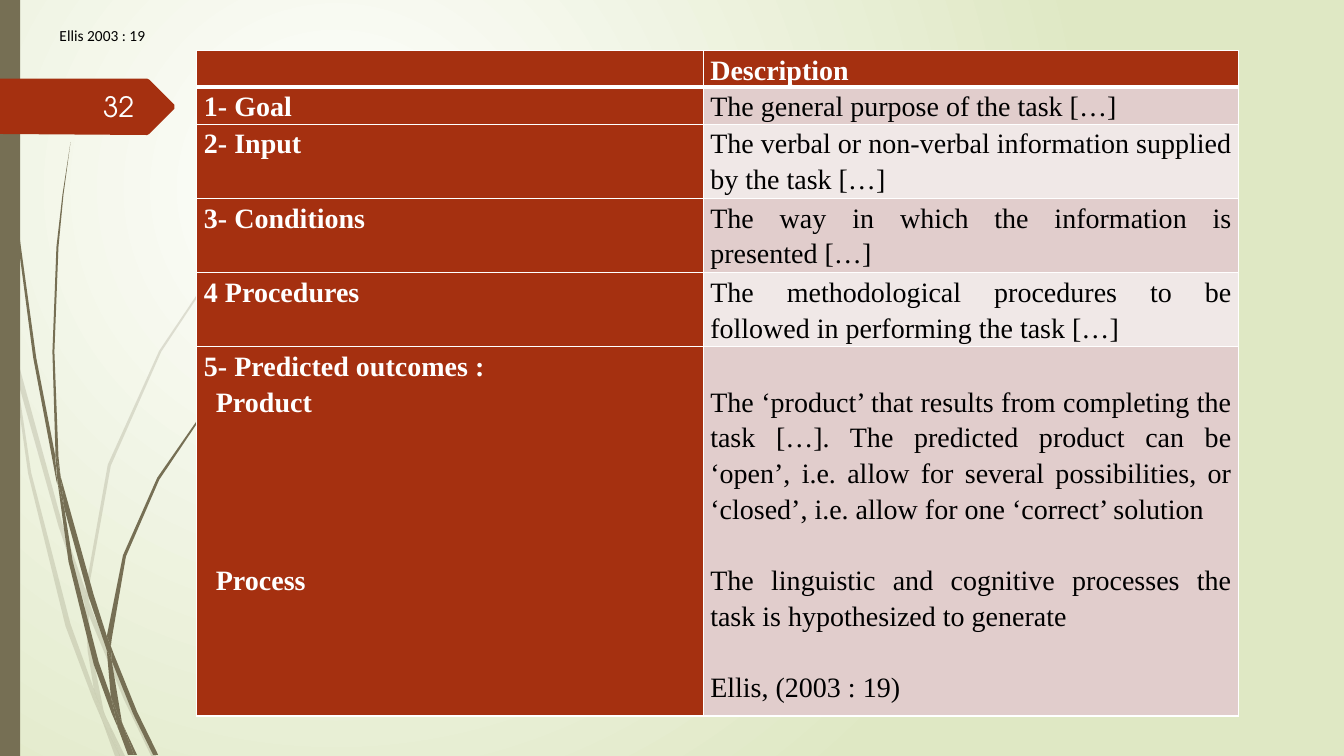
from lxml.etree import SubElement
from pptx import Presentation
from pptx.dml.color import RGBColor
from pptx.enum.shapes import MSO_SHAPE
from pptx.enum.text import MSO_ANCHOR, PP_ALIGN
from pptx.oxml.ns import qn
from pptx.util import Cm, Pt

COLORS = {
    "white": "FFFFFF", "black": "000000", "meadow": "DFE8C4", "stem": "766F54",
    "rust": "A53010", "rose": "E1CDCC", "blush": "F0E8E7", "number": "FEFFFF",
}
BODY = {"name": "Times New Roman", "size": Pt(20)}
GRID = Cm(0.0254)  # unit of the outline points below

PALE_STEMS = [
    [(11, 350), (9, 322), (0, 282), (0, 299), (10, 344)],
    [(58, 522), (84, 599), (85, 586), (62, 520), (14, 345), (17, 376)],
    [(92, 607), (88, 596), (88, 610), (123, 694), (150, 750), (155, 750), (127, 692)],
    [(119, 750), (124, 750), (105, 711)],
    [(93, 683), (70, 619), (31, 469), (17, 376), (11, 350), (28, 470), (65, 621),
     (92, 693), (101, 714), (99, 707)],
    [(84, 599), (87, 646), (93, 683), (96, 692), (105, 711), (103, 706), (91, 646),
     (88, 610), (88, 608)],
    [(88, 584), (110, 462), (160, 349), (229, 245), (268, 198), (290, 175), (312, 154),
     (312, 153), (289, 175), (268, 197), (228, 244), (158, 348), (107, 461), (85, 584),
     (85, 586), (88, 596)],
    [(101, 714), (114, 750), (119, 750)],
    [(88, 608), (88, 610), (88, 596), (85, 586), (84, 599)],
    [(96, 692), (93, 683), (99, 707), (101, 714), (119, 750), (105, 711)],
]
DARK_STEMS = [
    [(7, 110), (17, 233), (33, 355), (56, 477), (57, 481), (55, 457), (55, 453),
     (36, 355), (19, 232), (8, 109), (5, 48), (4, 0), (3, 0), (4, 48)],
    [(88, 592), (106, 645), (106, 633), (106, 631), (93, 590), (60, 472), (64, 505)],
    [(113, 649), (110, 641), (111, 656), (132, 708), (152, 749), (157, 749), (136, 706)],
    [(110, 691), (98, 657), (72, 556), (64, 505), (57, 477), (68, 557), (93, 659),
     (111, 708), (117, 722), (116, 717)],
    [(60, 472), (58, 453), (54, 349), (58, 245), (63, 193), (70, 141), (62, 193),
     (56, 245), (52, 349), (55, 449)],
    [(133, 749), (136, 749), (122, 719)],
    [(57, 477), (64, 505), (60, 472), (55, 449), (55, 453)],
    [(111, 633), (125, 552), (158, 476), (205, 406), (231, 374), (245, 359), (261, 344),
     (260, 344), (245, 358), (231, 373), (204, 405), (156, 474), (122, 551), (106, 631),
     (110, 641)],
    [(117, 722), (127, 749), (131, 749)],
    [(106, 645), (110, 691), (116, 706), (122, 719), (121, 716), (111, 656), (109, 651)],
    [(106, 645), (109, 651), (111, 656), (110, 641), (106, 631), (106, 633)],
    [(116, 706), (110, 691), (116, 717), (117, 722), (130, 749), (133, 749), (122, 719)],
]
NUMBER_FLAG = [(173, 108), (148, 133), (146, 134), (0, 133), (0, 78), (146, 78),
               (148, 79), (173, 104)]

# Each paragraph: text, points of space before it, left indent in cm
TASK_ROWS = [
    (0.93, [], [("Description", 0, 0)]),
    (0.93, [("1- Goal", 0, 0)], [("The general purpose of the task […]", 0, 0)]),
    (1.87, [("2- Input", 0, 0)],
     [("The verbal or non-verbal information supplied by the task […]", 0, 0)]),
    (1.87, [("3- Conditions", 0, 0)],
     [("The way in which the information is presented […]", 0, 0)]),
    (1.87, [("4 Procedures", 0, 0)],
     [("The methodological procedures to be followed in performing the task […]", 0, 0)]),
    (9.3, [("5- Predicted outcomes :", 0, 0), ("Product", 0, 0.3), ("Process", 102, 0.3)],
     [("The ‘product’ that results from completing the task […]. The predicted product "
       "can be ‘open’, i.e. allow for several possibilities, or ‘closed’, i.e. allow for "
       "one ‘correct’ solution", 0, 0),
      ("The linguistic and cognitive processes the task is hypothesized to generate",
       25.5, 0),
      ("Ellis, (2003 : 19)", 25.5, 0)]),
]


def draw_outline(shapes, points, color):
    builder = shapes.build_freeform(*points[0], scale=GRID)
    builder.add_line_segments(points[1:], close=True)
    outline = builder.convert_to_shape()
    outline.shadow.inherit = False
    outline.fill.solid()
    outline.fill.fore_color.rgb = RGBColor.from_string(COLORS[color])
    outline.line.fill.background()
    return outline


def write(paragraph, text, color, align, font):
    paragraph.alignment = align
    run = paragraph.add_run()
    run.text = text
    run.font.color.rgb = RGBColor.from_string(COLORS[color])
    for key, value in font.items():
        setattr(run.font, key, value)


deck = Presentation()
deck.slide_width, deck.slide_height = Cm(33.87), Cm(19.05)
slide = deck.slides.add_slide(deck.slide_layouts[6])

# Background glow
backdrop = slide.background.fill
backdrop.gradient()
for stop, position, color in zip(backdrop.gradient_stops, (0, 1), ("white", "meadow")):
    stop.position = position
    stop.color.rgb = RGBColor.from_string(COLORS[color])
gradient = slide.element.find(".//" + qn("a:gradFill"))
gradient.remove(gradient.find(qn("a:lin")))
glow = SubElement(gradient, qn("a:path"), path="circle")
SubElement(glow, qn("a:fillToRect"), l="50000", t="50000", r="100000", b="100000")

# Grass stems, side bar and page flag
for stems, alpha in ((PALE_STEMS, "20000"), (DARK_STEMS, "100000")):
    tuft = slide.shapes.add_group_shape()
    for points in stems:
        stem = draw_outline(tuft.shapes, points, "stem")
        tint = stem.element.spPr.find(qn("a:solidFill")).find(qn("a:srgbClr"))
        SubElement(tint, qn("a:alpha"), val=alpha)

side_bar = slide.shapes.add_shape(MSO_SHAPE.RECTANGLE, 0, 0, Cm(0.51), Cm(19.05))
side_bar.shadow.inherit = False
side_bar.fill.solid()
side_bar.fill.fore_color.rgb = RGBColor.from_string(COLORS["stem"])
side_bar.line.fill.background()
draw_outline(slide.shapes, NUMBER_FLAG, "rust")

# Task components table
task_table = slide.shapes.add_table(
    len(TASK_ROWS), 2, Cm(4.96), Cm(1.27), Cm(26.26), Cm(16.77)).table
for column, width in zip(task_table.columns, (12.76, 13.5)):
    column.width = Cm(width)
margins = {"margin_left": Cm(0.18), "margin_right": Cm(0.18),
           "margin_top": 0, "margin_bottom": 0}
for r, (height, component, description) in enumerate(TASK_ROWS):
    task_table.rows[r].height = Cm(height)
    for c, paragraphs in enumerate((component, description)):
        cell = task_table.cell(r, c)
        strong = r == 0 or c == 0
        for key, value in margins.items():
            setattr(cell, key, value)
        for side in "LRTB":
            thick = (r, side) in ((0, "B"), (1, "T"))
            border = SubElement(cell._tc.get_or_add_tcPr(), qn(f"a:ln{side}"),
                                w=str(Pt(3 if thick else 1)))
            paint = SubElement(border, qn("a:solidFill"))
            SubElement(paint, qn("a:srgbClr"), val=COLORS["white"])
        cell.fill.solid()
        shade = "rust" if strong else "rose" if r % 2 else "blush"
        cell.fill.fore_color.rgb = RGBColor.from_string(COLORS[shade])
        for i, (text, gap, indent) in enumerate(paragraphs):
            paragraph = (cell.text_frame.add_paragraph() if i
                         else cell.text_frame.paragraphs[0])
            paragraph.line_spacing = 1.15
            if gap:
                paragraph.space_before = Pt(gap)
            if indent:
                paragraph._p.get_or_add_pPr().set("marL", str(Cm(indent)))
            write(paragraph, text, "white" if strong else "black", PP_ALIGN.JUSTIFY,
                  {**BODY, "bold": strong})
task_table.cell(len(TASK_ROWS) - 1, 1).margin_top = Cm(0.9)

# Source note and page number
source_note = slide.shapes.add_textbox(0, 0, Cm(33.87), Cm(1.27)).text_frame
source_format = {"word_wrap": True, "vertical_anchor": MSO_ANCHOR.BOTTOM,
                 "margin_left": Cm(1.5), "margin_bottom": Cm(0.15)}
page_number = slide.shapes.add_textbox(Cm(1.47), Cm(2.18), Cm(2.16), Cm(1.02)).text_frame
number_format = {"word_wrap": True, "vertical_anchor": MSO_ANCHOR.MIDDLE}
for frame, settings in ((source_note, source_format), (page_number, number_format)):
    for key, value in settings.items():
        setattr(frame, key, value)
write(source_note.paragraphs[0], "Ellis 2003 : 19", "black", PP_ALIGN.JUSTIFY,
      {"name": "Calibri", "size": Pt(11)})
write(page_number.paragraphs[0], "32", "number", PP_ALIGN.RIGHT,
      {"name": "TeX Gyre Adventor", "size": Pt(20)})

deck.save("out.pptx")
